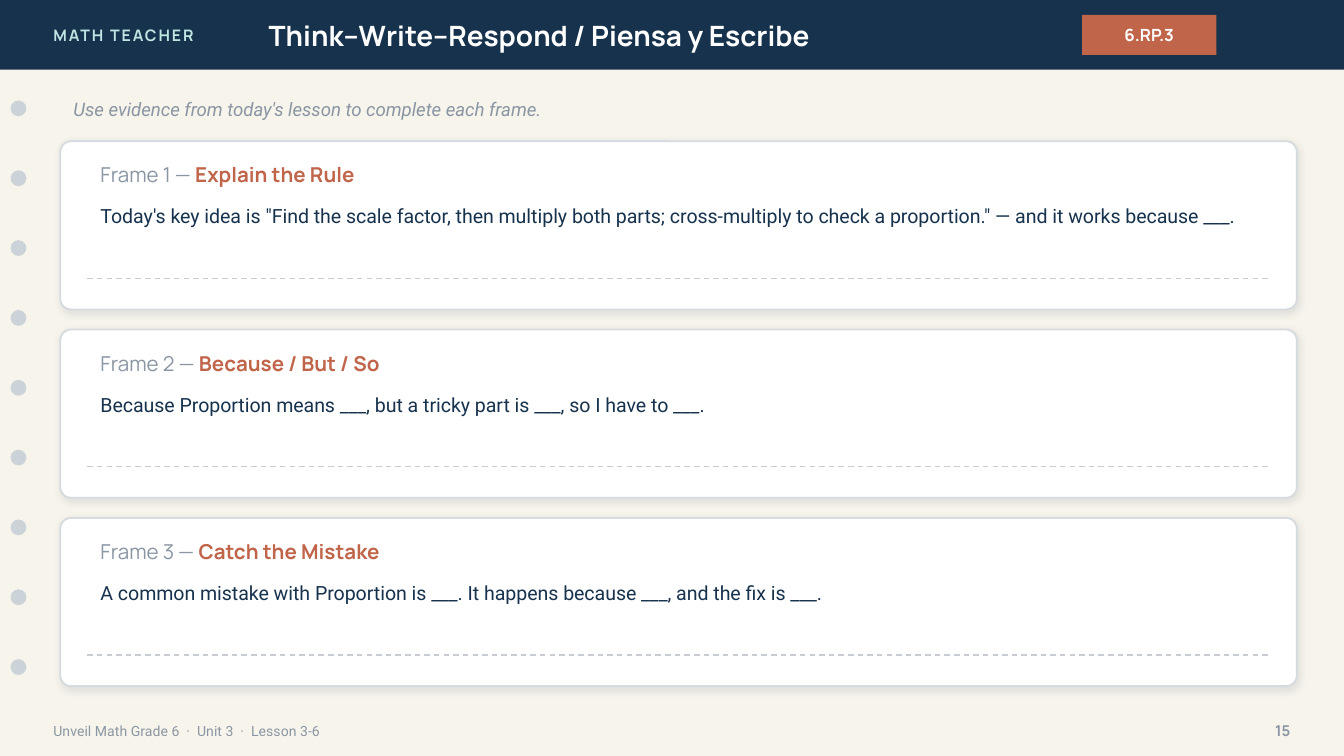
from lxml.etree import SubElement
from pptx import Presentation
from pptx.dml.color import RGBColor
from pptx.enum.dml import MSO_LINE
from pptx.enum.shapes import MSO_CONNECTOR, MSO_SHAPE
from pptx.enum.text import MSO_ANCHOR, PP_ALIGN
from pptx.oxml.ns import qn
from pptx.util import Cm, Pt

CREAM = RGBColor(0xF7, 0xF4, 0xEC)
NAVY = RGBColor(0x17, 0x32, 0x4D)
MINT = RGBColor(0xBF, 0xE6, 0xE2)
WHITE = RGBColor(0xFF, 0xFF, 0xFF)
RUST = RGBColor(0xC0, 0x65, 0x4A)
GREY = RGBColor(0x8A, 0x96, 0xA3)
HOLE = RGBColor(0xCB, 0xD3, 0xD9)
CARD_EDGE = RGBColor(0xD6, 0xDB, 0xDF)
RULE = RGBColor(0xC7, 0xCD, 0xD2)
SHADOW = RGBColor(0x1C, 0x2E, 0x42)

HEADING_FONT = "Manrope"
BODY_FONT = "Roboto"

HEADER_HEIGHT = 1.32
HOLE_COUNT, HOLE_TOP, HOLE_PITCH = 9, 1.9, 1.32
CARD_LEFT, CARD_WIDTH, CARD_HEIGHT = 1.14, 23.37, 3.18
CARD_TOP, CARD_PITCH = 2.67, 3.56
INNER_LEFT, INNER_WIDTH = 1.65, 22.35

FRAMES = [
    ("Explain the Rule",
     "Today's key idea is \"Find the scale factor, then multiply both parts; "
     "cross-multiply to check a proportion.\" — and it works because ___."),
    ("Because / But / So",
     "Because Proportion means ___, but a tricky part is ___, so I have to ___."),
    ("Catch the Mistake",
     "A common mistake with Proportion is ___. It happens because ___, "
     "and the fix is ___."),
]


def add_block(slide, kind, left, top, width, height, fill):
    """Add a flat preset shape without outline or shadow."""
    block = slide.shapes.add_shape(kind, Cm(left), Cm(top), Cm(width), Cm(height))
    block.shadow.inherit = False
    block.fill.solid()
    block.fill.fore_color.rgb = fill
    block.line.fill.background()
    return block


def set_font(font, name, size, color, bold=False, italic=False):
    font.name = name
    font.size = Pt(size)
    font.color.rgb = color
    font.bold = bold
    font.italic = italic


def add_label(slide, left, top, width, height, text="", anchor=MSO_ANCHOR.MIDDLE):
    """Add a wrapping one-paragraph text box and return its paragraph."""
    frame = slide.shapes.add_textbox(
        Cm(left), Cm(top), Cm(width), Cm(height)).text_frame
    frame.word_wrap = True
    frame.vertical_anchor = anchor
    paragraph = frame.paragraphs[0]
    if text:
        paragraph.add_run().text = text
    return paragraph


def add_soft_shadow(card):
    effects = card._element.spPr.find(qn("a:effectLst"))
    shadow = SubElement(effects, qn("a:outerShdw"), blurRad=str(Pt(4)),
                        dist=str(Pt(1)), dir="5400000", algn="bl",
                        rotWithShape="0")
    tint = SubElement(shadow, qn("a:srgbClr"), val=str(SHADOW))
    SubElement(tint, qn("a:alpha"), val="10000")


def add_writing_line(slide, top):
    line = slide.shapes.add_connector(
        MSO_CONNECTOR.STRAIGHT, Cm(INNER_LEFT), Cm(top),
        Cm(INNER_LEFT + INNER_WIDTH), Cm(top))
    line.line.color.rgb = RULE
    line.line.width = Pt(0.75)
    line.line.dash_style = MSO_LINE.DASH
    SubElement(line._element.spPr, qn("a:effectLst"))


def add_header(slide):
    add_block(slide, MSO_SHAPE.RECTANGLE, 0, 0, 25.4, HEADER_HEIGHT, NAVY)
    teacher = add_label(slide, 0.76, 0, 6.1, HEADER_HEIGHT, "MATH TEACHER")
    set_font(teacher.font, HEADING_FONT, 8.5, MINT, bold=True)
    teacher.runs[0].font._element.set("spc", "100")
    title = add_label(slide, 4.83, 0, 14.22, HEADER_HEIGHT,
                      "Think–Write–Respond / Piensa y Escribe")
    set_font(title.font, HEADING_FONT, 15, WHITE, bold=True)

    badge = add_block(slide, MSO_SHAPE.RECTANGLE, 20.45, 0.28, 2.54, 0.76, RUST)
    badge.text_frame.vertical_anchor = MSO_ANCHOR.MIDDLE
    standard = badge.text_frame.paragraphs[0]
    standard.add_run().text = "6.RP.3"
    standard.alignment = PP_ALIGN.CENTER
    set_font(standard.font, HEADING_FONT, 9, WHITE, bold=True)


def add_binder_holes(slide):
    for index in range(HOLE_COUNT):
        add_block(slide, MSO_SHAPE.OVAL, 0.2, HOLE_TOP + index * HOLE_PITCH,
                  0.3, 0.3, HOLE)


def add_footer(slide):
    lesson = add_label(slide, 0.76, 13.46, 17.78, 0.71,
                       "Unveil Math Grade 6  ·  Unit 3  ·  Lesson 3-6")
    set_font(lesson.font, BODY_FONT, 7.5, GREY)
    page = add_label(slide, 23.37, 13.46, 1.27, 0.71, "15")
    page.alignment = PP_ALIGN.RIGHT
    set_font(page.font, HEADING_FONT, 8, GREY, bold=True)


def add_frame_card(slide, number, name, prompt):
    top = CARD_TOP + (number - 1) * CARD_PITCH
    card = add_block(slide, MSO_SHAPE.ROUNDED_RECTANGLE,
                     CARD_LEFT, top, CARD_WIDTH, CARD_HEIGHT, WHITE)
    card.adjustments[0] = 0.064
    card.line.color.rgb = CARD_EDGE
    card.line.width = Pt(1)
    add_soft_shadow(card)

    heading = add_label(slide, INNER_LEFT, top + 0.25, INNER_WIDTH, 0.76)
    for text, color, bold in ((f"Frame {number} — ", GREY, False),
                              (name, RUST, True)):
        part = heading.add_run()
        part.text = text
        set_font(part.font, HEADING_FONT, 11, color, bold)

    sentence = add_label(slide, INNER_LEFT, top + 1.07, INNER_WIDTH, 1.02,
                         prompt, MSO_ANCHOR.TOP)
    set_font(sentence.font, BODY_FONT, 10.5, NAVY)
    add_writing_line(slide, top + 2.59)


def main():
    deck = Presentation()
    deck.slide_width, deck.slide_height = Cm(25.4), Cm(14.29)
    slide = deck.slides.add_slide(deck.slide_layouts[6])
    slide.background.fill.solid()
    slide.background.fill.fore_color.rgb = CREAM

    add_header(slide)
    add_binder_holes(slide)
    add_footer(slide)
    instruction = add_label(
        slide, CARD_LEFT, 1.68, CARD_WIDTH, 0.76,
        "Use evidence from today's lesson to complete each frame.")
    set_font(instruction.font, BODY_FONT, 10, GREY, italic=True)
    for number, (name, prompt) in enumerate(FRAMES, start=1):
        add_frame_card(slide, number, name, prompt)
    deck.save("out.pptx")


if __name__ == "__main__":
    main()
